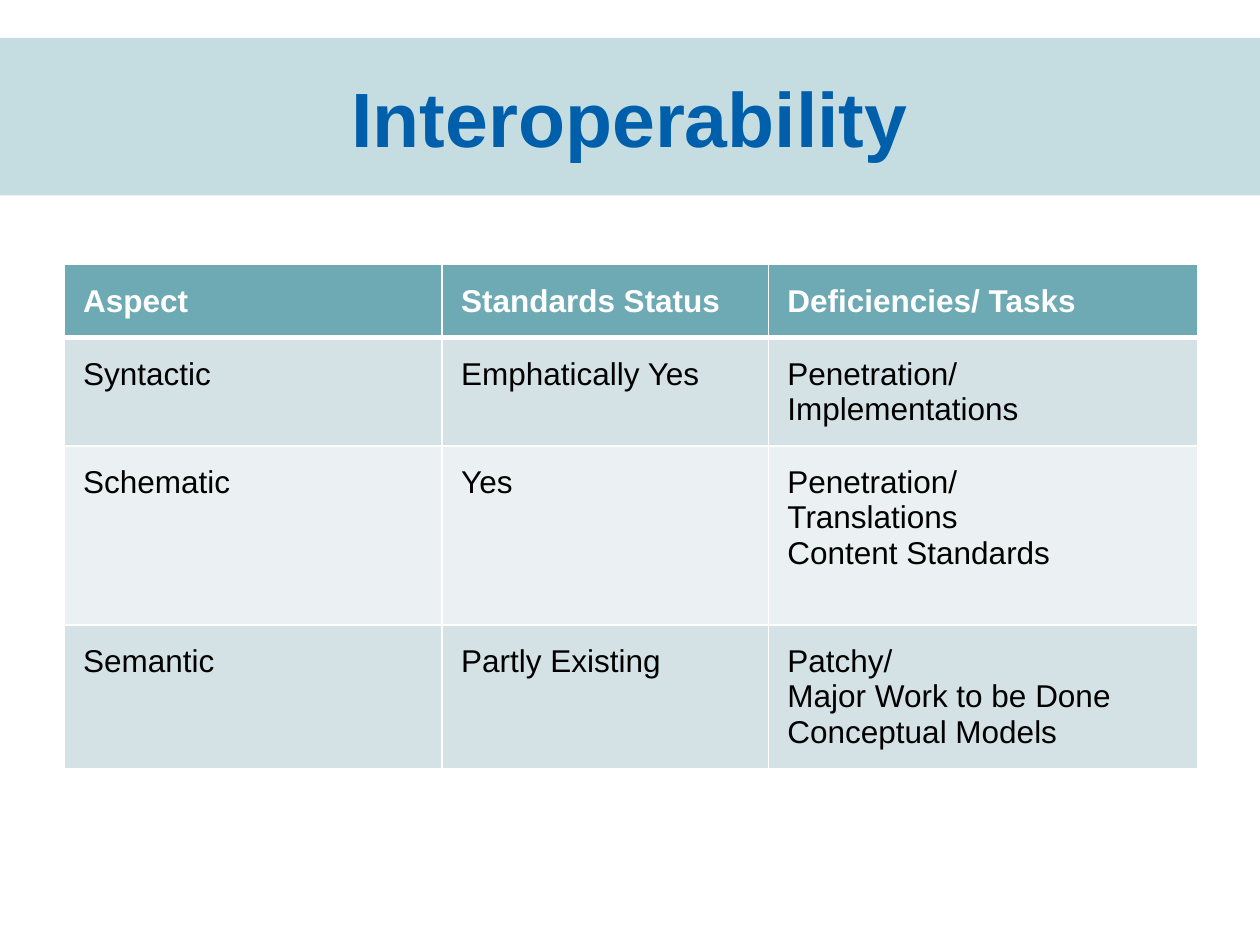
from lxml.etree import SubElement
from pptx import Presentation
from pptx.dml.color import RGBColor
from pptx.enum.shapes import MSO_SHAPE as Shape
from pptx.enum.text import MSO_ANCHOR as Anchor, PP_ALIGN as Align
from pptx.oxml.ns import qn
from pptx.util import Inches, Pt

COLORS = {"band": "C5DDE1", "title": "005FAA", "header": "6EAAB4", "odd": "D5E2E5",
          "even": "EBF1F2", "white": "FFFFFF", "text": "000000"}
COLUMN_WIDTHS = [3, 2.59, 3.41]
ROW_HEIGHTS = [0.57, 0.86, 1.42, 1.14]
ROWS = [
    ["Aspect", "Standards Status", "Deficiencies/ Tasks"],
    ["Syntactic", "Emphatically Yes", "Penetration/ Implementations"],
    ["Schematic", "Yes", "Penetration/\nTranslations\nContent Standards"],
    ["Semantic", "Partly Existing", "Patchy/\nMajor Work to be Done\nConceptual Models"],
]


def color(name):
    """Return the named colour."""
    return RGBColor.from_string(COLORS[name])


def style_text(frame, size, name, bold, align):
    """Format every paragraph and run of a text frame."""
    for para in frame.paragraphs:
        para.alignment = align
        for span in para.runs:
            span.font.name = "Arial"
            span.font.size = Pt(size)
            span.font.bold = bold
            span.font.color.rgb = color(name)


def add_title(page, left, top, width, height, text):
    """Add the full-width title band."""
    band = page.shapes.add_shape(Shape.RECTANGLE, Inches(left), Inches(top),
                                 Inches(width), Inches(height))
    band.shadow.inherit = False
    band.fill.solid()
    band.fill.fore_color.rgb = color("band")
    band.line.fill.background()
    frame = band.text_frame
    frame.word_wrap = True
    frame.vertical_anchor = Anchor.MIDDLE
    frame.text = text
    style_text(frame, 44, "title", True, Align.CENTER)


def set_borders(cell, widths):
    """Draw white cell borders, given widths in points by side."""
    props = cell._tc.get_or_add_tcPr()
    for index, (side, width) in enumerate(widths.items()):
        line = props.makeelement(qn(f"a:ln{side}"), {"w": str(Pt(width))})
        fill = SubElement(line, qn("a:solidFill"))
        SubElement(fill, qn("a:srgbClr"), val=COLORS["white"])
        props.insert(index, line)


def style_cell(cell, row):
    """Set the fill, margins, text style and borders for a cell in a given row."""
    header = row == 0
    cell.margin_left = cell.margin_right = Inches(0.15)
    cell.margin_top = cell.margin_bottom = Inches(0.15)
    cell.fill.solid()
    cell.fill.fore_color.rgb = color("header" if header else "odd" if row % 2 else "even")
    style_text(cell.text_frame, 18, "white" if header else "text", header, Align.LEFT)
    set_borders(cell, {"L": 1, "R": 1, "T": 3 if row == 1 else 1, "B": 3 if header else 1})


def add_status_table(page, left, top, width, height):
    """Add the table of interoperability aspects."""
    table = page.shapes.add_table(len(ROWS), len(COLUMN_WIDTHS), Inches(left), Inches(top),
                                  Inches(width), Inches(height)).table
    for column, size in zip(table.columns, COLUMN_WIDTHS):
        column.width = Inches(size)
    for row, size in zip(table.rows, ROW_HEIGHTS):
        row.height = Inches(size)
    for row, texts in enumerate(ROWS):
        for column, text in enumerate(texts):
            cell = table.cell(row, column)
            cell.text = text
            style_cell(cell, row)


def main():
    """Build and save the deck."""
    deck = Presentation()
    deck.slide_width, deck.slide_height = Inches(10), Inches(7.5)
    page = deck.slides.add_slide(deck.slide_layouts[6])
    add_title(page, 0, 0.3, 10, 1.25, "Interoperability")
    add_status_table(page, 0.51, 2.1, sum(COLUMN_WIDTHS), sum(ROW_HEIGHTS))
    deck.save("out.pptx")


if __name__ == "__main__":
    main()
